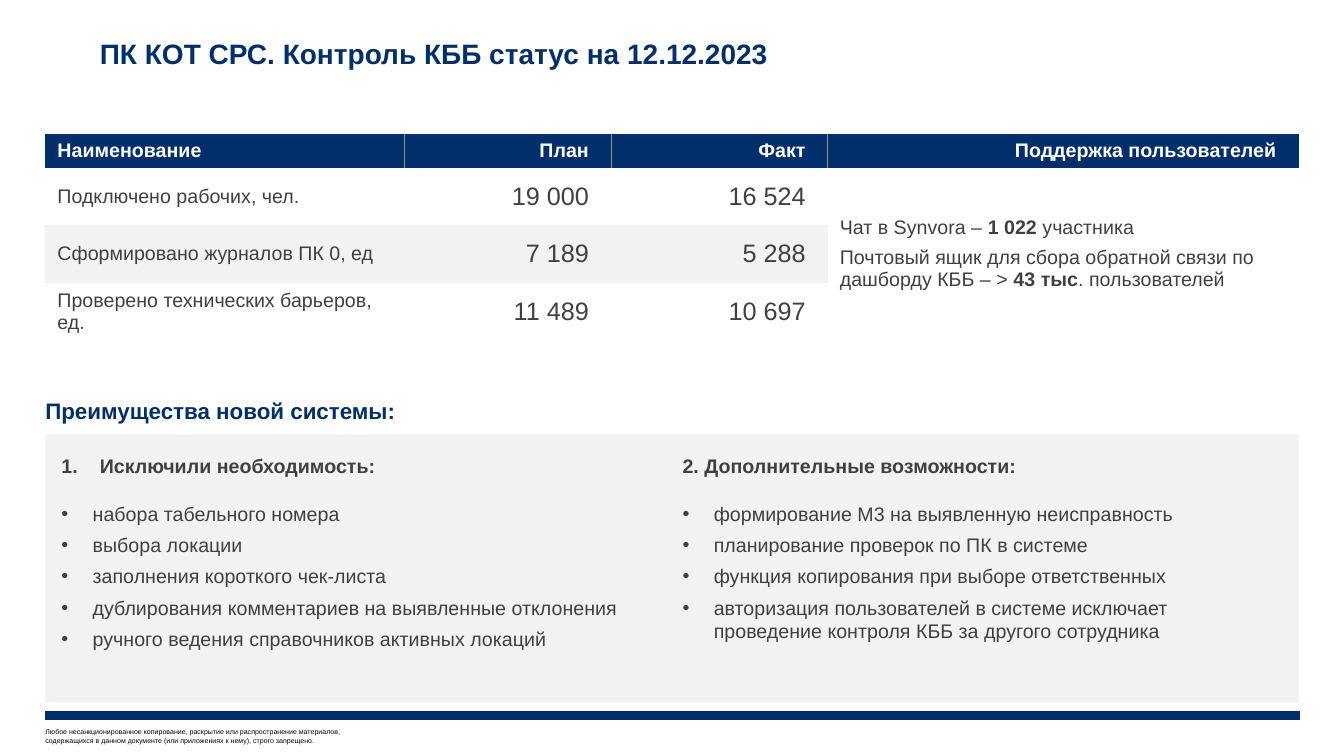
from lxml.etree import SubElement
from pptx import Presentation
from pptx.dml.color import RGBColor
from pptx.enum.shapes import MSO_CONNECTOR, MSO_SHAPE
from pptx.enum.text import MSO_ANCHOR, MSO_AUTO_SIZE, PP_ALIGN
from pptx.oxml.ns import qn
from pptx.util import Emu, Pt

NAVY = RGBColor(0x00, 0x2F, 0x6C)
PALE = RGBColor(0xF2, 0xF2, 0xF2)
DARK = RGBColor(0x40, 0x40, 0x40)
GREY = RGBColor(0x90, 0x90, 0x90)
WHITE = RGBColor(0xFF, 0xFF, 0xFF)
BLACK = RGBColor(0x00, 0x00, 0x00)

FONT = "Arial"
EMU_PER_PX = 9144  # 100 px to the inch
NO_STYLE_NO_GRID = "{2D5ABB26-0587-4C30-8999-92F81FD0307C}"


def px(value):
    return Emu(value * EMU_PER_PX)


def add_bullet(paragraph, indent, mark):
    """Hang a dot or an automatic number to the left of the paragraph."""
    properties = paragraph._p.get_or_add_pPr()
    properties.set("marL", str(px(indent)))
    properties.set("indent", str(-px(indent)))
    if mark == "1.":
        SubElement(properties, qn("a:buFont"), typeface="+mj-lt")
        SubElement(properties, qn("a:buAutoNum"), type="arabicPeriod")
    else:
        SubElement(properties, qn("a:buFont"), typeface=FONT)
        SubElement(properties, qn("a:buChar"), char=mark)


def write(frame, *paragraphs, size=14, color=DARK, bold=False, align=PP_ALIGN.LEFT,
          after=None, spacing=None, mark=None, indent=0):
    """Fill a text frame; ** switches bold, \\v breaks the line."""
    for number, text in enumerate(paragraphs):
        paragraph = frame.add_paragraph() if number else frame.paragraphs[0]
        if mark:
            add_bullet(paragraph, indent, mark)
        paragraph.alignment = align
        if after is not None:
            paragraph.space_after = Pt(after)
        if spacing is not None:
            paragraph.line_spacing = spacing
        for part, piece in enumerate(text.split("**")):
            for row, line in enumerate(piece.split("\v")):
                if row:
                    paragraph.add_line_break()
                run = paragraph.add_run()
                run.text = line
                run.font.name = FONT
                run.font.size = Pt(size)
                run.font.bold = bold or part % 2 == 1
                run.font.color.rgb = color


class StatusSlide:
    def __init__(self, presentation):
        self.slide = presentation.slides.add_slide(presentation.slide_layouts[5])
        self.shapes = self.slide.shapes

    def fit(self, shape, place, margins, anchor):
        shape.left, shape.top, shape.width, shape.height = map(px, place)
        frame = shape.text_frame
        frame.word_wrap = True
        frame.auto_size = MSO_AUTO_SIZE.SHAPE_TO_FIT_TEXT
        frame.vertical_anchor = anchor
        (frame.margin_left, frame.margin_top,
         frame.margin_right, frame.margin_bottom) = map(px, margins)
        return frame

    def title(self, place, text, **style):
        frame = self.fit(self.shapes.title, place, (0, 4, 0, 0), MSO_ANCHOR.MIDDLE)
        write(frame, text, **style)

    def text(self, place, *paragraphs, margins=(0, 5, 10, 5),
             anchor=MSO_ANCHOR.TOP, **style):
        box = self.shapes.add_textbox(*map(px, place))
        write(self.fit(box, place, margins, anchor), *paragraphs, **style)

    def panel(self, place, color):
        shape = self.shapes.add_shape(MSO_SHAPE.RECTANGLE, *map(px, place))
        shape.shadow.inherit = False
        shape.fill.solid()
        shape.fill.fore_color.rgb = color
        shape.line.fill.background()

    def rule(self, left, right, y, color, weight):
        line = self.shapes.add_connector(
            MSO_CONNECTOR.STRAIGHT, px(left), px(y), px(right), px(y))
        line.line.color.rgb = color
        line.line.width = Pt(weight)
        SubElement(line._element.spPr, qn("a:effectLst"))

    def table(self, place, widths, heights):
        table = self.shapes.add_table(
            len(heights), len(widths), *map(px, place)).table
        table.first_row = table.horz_banding = False
        table._tbl.tblPr.find(qn("a:tableStyleId")).text = NO_STYLE_NO_GRID
        for column, width in zip(table.columns, widths):
            column.width = px(width)
        for row, height in zip(table.rows, heights):
            row.height = px(height)
        return table

    def cell(self, cell, *paragraphs, right=22, fill=None, borders=(), **style):
        cell.vertical_anchor = MSO_ANCHOR.MIDDLE
        cell.margin_left, cell.margin_right = px(12), px(right)
        cell.margin_top = cell.margin_bottom = px(5)
        for side in borders:
            edge = SubElement(cell._tc.get_or_add_tcPr(), qn("a:ln" + side),
                              w=str(Pt(0.5)))
            SubElement(SubElement(edge, qn("a:solidFill")), qn("a:srgbClr"),
                       val=str(GREY))
        if fill is None:
            cell.fill.background()
        else:
            cell.fill.solid()
            cell.fill.fore_color.rgb = fill
        write(cell.text_frame, *paragraphs, **style)


HEADER = ["Наименование", "План", "Факт", "Поддержка пользователей"]
INDICATORS = [
    ["Подключено рабочих, чел.", "19 000", "16 524"],
    ["Сформировано журналов ПК 0, ед", "7 189", "5 288"],
    ["Проверено технических барьеров, ед.", "11 489", "10 697"],
]
SUPPORT = [
    "Чат в Synvora – **1 022 **участника",
    "Почтовый ящик для сбора обратной связи по дашборду КББ – > "
    "**43 тыс**. пользователей",
]
REMOVED = [
    "набора табельного номера",
    "выбора локации",
    "заполнения короткого чек-листа",
    "дублирования комментариев на выявленные отклонения",
    "ручного ведения справочников активных локаций",
]
ADDED = [
    "формирование М3 на выявленную неисправность",
    "планирование проверок по ПК в системе",
    "функция копирования при выборе ответственных",
    "авторизация пользователей в системе исключает "
    "проведение контроля КББ за другого сотрудника",
]


def main():
    presentation = Presentation()
    presentation.slide_width, presentation.slide_height = px(1333), px(750)
    page = StatusSlide(presentation)

    # Footer
    page.text((45, 722, 512, 17),
              "Любое несанкционированное копирование, раскрытие или "
              "распространение материалов,\vсодержащихся в данном документе "
              "(или приложениях к нему), строго запрещено.",
              margins=(0, 0, 0, 0), anchor=MSO_ANCHOR.MIDDLE, size=5, color=BLACK)
    page.rule(45, 1289, 710, NAVY, 6)

    # Headings
    heading = dict(color=NAVY, bold=True, spacing=0.85)
    page.title((99, 37, 1135, 33),
               "ПК КОТ СРС. Контроль КББ статус на 12.12.2023", size=20, **heading)
    page.text((45, 394, 670, 27), "Преимущества новой системы:",
              margins=(0, 4, 0, 0), anchor=MSO_ANCHOR.MIDDLE, size=16, **heading)

    # Plan and fact table
    table = page.table((45, 133, 1243, 203), [356, 205, 215, 467], [32, 57, 57, 57])
    label = dict(right=9)
    figure = dict(align=PP_ALIGN.RIGHT)
    for column, (name, borders) in enumerate(zip(HEADER, ["R", "LR", "LR", "L"])):
        page.cell(table.cell(0, column), name, fill=NAVY, borders=borders,
                  color=WHITE, bold=True, **(figure if column else label))
    for row, (name, *values) in enumerate(INDICATORS, start=1):
        fill = PALE if row == 2 else None
        page.cell(table.cell(row, 0), name, fill=fill, **label)
        for column, value in enumerate(values, start=1):
            page.cell(table.cell(row, column), value, fill=fill, size=18, **figure)
    support = table.cell(1, 3)
    support.merge(table.cell(3, 3))
    page.cell(support, *SUPPORT, after=5.5)

    # Advantages
    page.panel((45, 431, 1243, 266), PALE)
    page.text((61, 445, 437, 34), "Исключили необходимость:",
              bold=True, after=5.5, mark="1.", indent=38)
    page.text((677, 445, 437, 34), "2. Дополнительные возможности:",
              bold=True, after=5.5)
    for left, width, height, points in [(61, 570, 162, REMOVED),
                                        (677, 577, 217, ADDED)]:
        page.text((left, 493, width, height), *points,
                  after=5.5, mark="•", indent=31)

    presentation.save("out.pptx")


if __name__ == "__main__":
    main()
